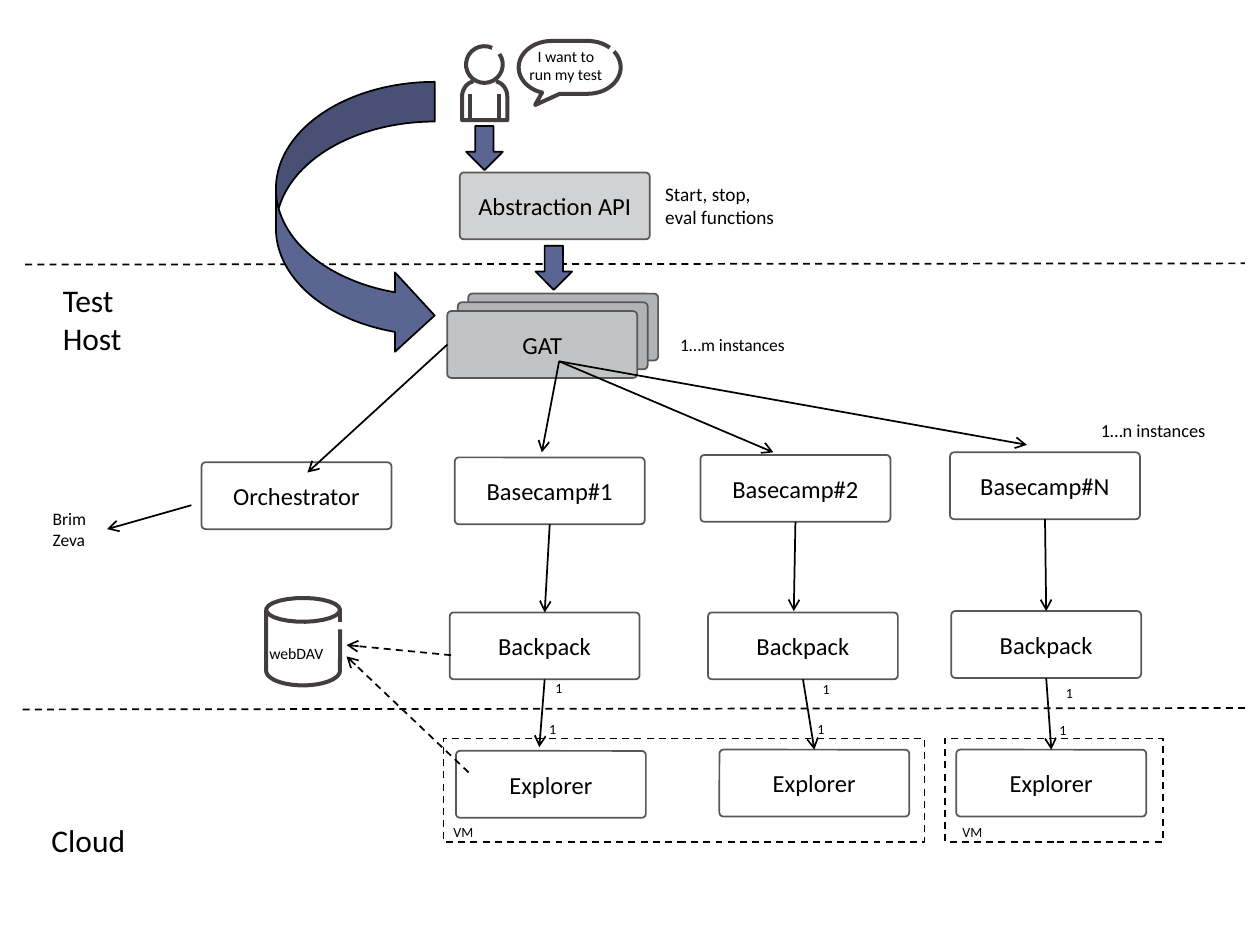
from dataclasses import dataclass
from math import cos, radians, sin

from lxml import etree
from pptx import Presentation
from pptx.dml.color import RGBColor
from pptx.enum.dml import MSO_LINE
from pptx.enum.shapes import MSO_CONNECTOR, MSO_SHAPE
from pptx.enum.text import MSO_ANCHOR, PP_ALIGN
from pptx.oxml.ns import qn
from pptx.slide import Slide
from pptx.util import Pt

RECT = MSO_SHAPE.RECTANGLE
ROUND = MSO_SHAPE.ROUNDED_RECTANGLE
DOWN = MSO_SHAPE.DOWN_ARROW
CURVE = MSO_SHAPE.CURVED_RIGHT_ARROW
STRAIGHT = MSO_CONNECTOR.STRAIGHT
DASH = MSO_LINE.DASH
LEFT, CENTER = PP_ALIGN.LEFT, PP_ALIGN.CENTER
TOP, MIDDLE = MSO_ANCHOR.TOP, MSO_ANCHOR.MIDDLE
HEAD, WEST, FOOT = 0, 1, 2

BLACK, WHITE, BLUE, INK, EDGE = "000000", "FFFFFF", "5B6592", "433D3F", "58585A"
WIDE, HIGH = 108.5, 38.2


def color(code):
    return RGBColor.from_string(code)


def write(frame, text, size=14, align=LEFT, anchor=TOP, pad=(7.2, 0), wrap=True):
    frame.word_wrap = wrap
    frame.vertical_anchor = anchor
    frame.margin_left, frame.margin_right = Pt(pad[0]), Pt(pad[1])
    frame.margin_top = frame.margin_bottom = Pt(3.6)
    frame.text = text
    for para in frame.paragraphs:
        para.alignment = align
        para.font.size = Pt(size)
        para.font.name = "Calibri"
        para.font.color.rgb = color(BLACK)


def arc(mid, radii, start, end, steps=24):
    turns = [radians(start + (end - start) * i / steps) for i in range(steps + 1)]
    return [(mid[0] + radii[0] * cos(t), mid[1] + radii[1] * sin(t)) for t in turns]


@dataclass
class Zone:
    slide: Slide
    x: float
    y: float

    def spot(self, x, y):
        return Pt(self.x + x), Pt(self.y + y)

    def shape(self, kind, x, y, w, h, fill=WHITE, line=BLACK):
        item = self.slide.shapes.add_shape(kind, *self.spot(x, y), Pt(w), Pt(h))
        item.shadow.inherit = False
        item.fill.solid()
        item.fill.fore_color.rgb = color(fill)
        item.line.color.rgb = color(line)
        item.line.width = Pt(1)
        return item

    def node(self, text, x, y, fill=WHITE):
        item = self.shape(ROUND, x, y, WIDE, HIGH, fill, EDGE)
        item.adjustments[0] = 0.06
        if text:
            write(item.text_frame, text, align=CENTER, anchor=MIDDLE, pad=(0, 0), wrap=False)
        return item

    def label(self, text, x, y, w, h, **form):
        box = self.slide.shapes.add_textbox(*self.spot(x, y), Pt(w), Pt(h))
        write(box.text_frame, text, **form)

    def link(self, start, end, dash=False, arrow=True):
        line = self.slide.shapes.add_connector(STRAIGHT, 0, 0, 0, 0)
        if isinstance(start[0], (int, float)):
            line.begin_x, line.begin_y = self.spot(*start)
        else:
            line.begin_connect(*start)
        if isinstance(end[0], (int, float)):
            line.end_x, line.end_y = self.spot(*end)
        else:
            line.end_connect(*end)
        line.line.color.rgb = color(BLACK)
        line.line.width = Pt(1)
        if dash:
            line.line.dash_style = DASH
        props = line.element.spPr
        if arrow:
            etree.SubElement(props.find(qn("a:ln")), qn("a:tailEnd"), type="arrow")
        etree.SubElement(props, qn("a:effectLst"))

    def trace(self, points, close=False):
        spots = [self.spot(*p) for p in points]
        build = self.slide.shapes.build_freeform(*spots[0])
        build.add_line_segments(spots[1:], close=close)
        item = build.convert_to_shape()
        item.shadow.inherit = False
        item.fill.background()
        item.line.color.rgb = color(INK)
        item.line.width = Pt(2.3)


def person(zone):
    zone.trace(arc((13.8, 11.7), (10.5, 10.5), -35, 295))
    sides = arc((9, 30), (7.9, 8.8), 260, 180) + [(1.1, 43.5), (26.9, 43.5)]
    zone.trace(sides + arc((19, 30), (7.9, 8.8), 0, -80))
    for x in (5.8, 22.2):
        zone.trace([(x, 28.5), (x, 43.5)])


def bubble(zone):
    left, right, radii = (20, 16.2), (40.5, 16.2), (18.9, 15.1)
    tail = [(24.6, 31.3), (10.5, 37.7), (14.6, 30.4)]
    zone.trace(arc(right, radii, -37, 90) + tail + arc(left, radii, 107, 270)
               + arc(right, radii, 270, 312))
    zone.label("I want to run my test", -1.5, 0.6, 59, 39, size=9, align=CENTER, pad=(7.2, 7.2))


def disk(zone):
    zone.trace(arc((22.2, 8), (21.1, 6.8), 0, 345), close=True)
    zone.trace([(43.4, 8), (43.4, 15)])
    zone.trace([(1.1, 8)] + arc((22.2, 42.8), (21.1, 8.4), 180, 0) + [(43.4, 19.2)])
    zone.label("webDAV", -4.2, 23.8, 50, 18, size=9)


def front(zone):
    person(Zone(zone.slide, zone.x + 263, zone.y + 25.2))
    bubble(Zone(zone.slide, zone.x + 295.3, zone.y + 22.3))
    zone.node("Abstraction API", 262.8, 98.6, "D1D2D4")
    zone.label("Start, stop,\neval functions", 373, 100.8, 83, 40, size=11)
    for x, y in ((266.4, 72), (306, 140.4)):
        zone.shape(DOWN, x, y, 20.9, 25.2, BLUE)
    zone.shape(CURVE, 157.7, 46.8, 90.7, 156.2, BLUE)


def host(zone):
    zone.label("Test Host", 28.8, 6, 60.5, 51, size=18, pad=(7.2, 7.2))
    zone.node("", 267.6, 16.8, "B1B3B4")
    zone.node("", 261.6, 21.8, "B1B3B4")
    gat = zone.node("GAT", 255.6, 26.8, "C2C3C4")
    zone.label("1…m instances", 381.6, 36.2, 90, 20, size=10)
    zone.label("1…n instances", 622, 85.2, 91, 20, size=10.5)
    zone.node("Orchestrator", 115.2, 113.2)
    zone.link((gat, WEST), (175.7, 119))
    zone.link((109.4, 137.7), (61.2, 151.4))
    zone.label("Brim\nZeva", 23, 135.6, 38, 37, size=10)
    for end in ((309.6, 107.5), (442, 107.5), (586.8, 103.2)):
        zone.link((319.5, 55.5), end)
    packs = []
    columns = (("1", 259.9, 110.4, 257, 199), ("2", 400.3, 109, 404.6, 199),
               ("N", 542.9, 107.5, 543.6, 198.2))
    for tag, x, y, left, top in columns:
        camp = zone.node(f"Basecamp#{tag}", x, y)
        pack = zone.node("Backpack", left, top)
        zone.link((camp, FOOT), (453.6, 198.2) if tag == "2" else (pack, HEAD))
        packs.append(pack)
    disk(Zone(zone.slide, zone.x + 151, zone.y + 189.5))
    zone.link((257.8, 223.4), (198, 217.6), dash=True)
    return packs


def cloud(zone, packs):
    zone.label("Cloud", 22.3, 60.8, 73, 29, size=18)
    for x, w, left in ((253.4, 275, 252), (540, 124.6, 542.9)):
        zone.shape(RECT, x, 17, w, 59).line.dash_style = DASH
        zone.label("VM", left, 61.8, 27, 17, size=8)
    columns = ((260.6, 24.1, (310.3, -20.5), (306.7, 3.2)),
               (411.1, 23.4, (463, -19.8), (460, 3.2)),
               (546.5, 23.4, (602, -17.6), (598.3, 4)))
    for i, (x, y, *marks) in enumerate(columns):
        item = zone.node("Explorer", x, y)
        zone.link((packs[i], FOOT), (item, HEAD) if i else (308.2, 22))
        for mark in marks:
            zone.label("1", *mark, 19, 17, size=8)
    zone.link((267.8, 36.4), (198, -29.9), dash=True)


def main():
    deck = Presentation()
    deck.slide_width, deck.slide_height = Pt(720), Pt(540)
    slide = deck.slides.add_slide(deck.slide_layouts[6])
    page = Zone(slide, 0, 0)
    page.link((14.4, 151.2), (711.4, 150.5), dash=True, arrow=False)
    page.link((13, 405.4), (713.5, 404.6), dash=True, arrow=False)
    front(page)
    packs = host(Zone(slide, 0, 151))
    cloud(Zone(slide, 0, 405), packs)
    deck.save("out.pptx")


if __name__ == "__main__":
    main()
